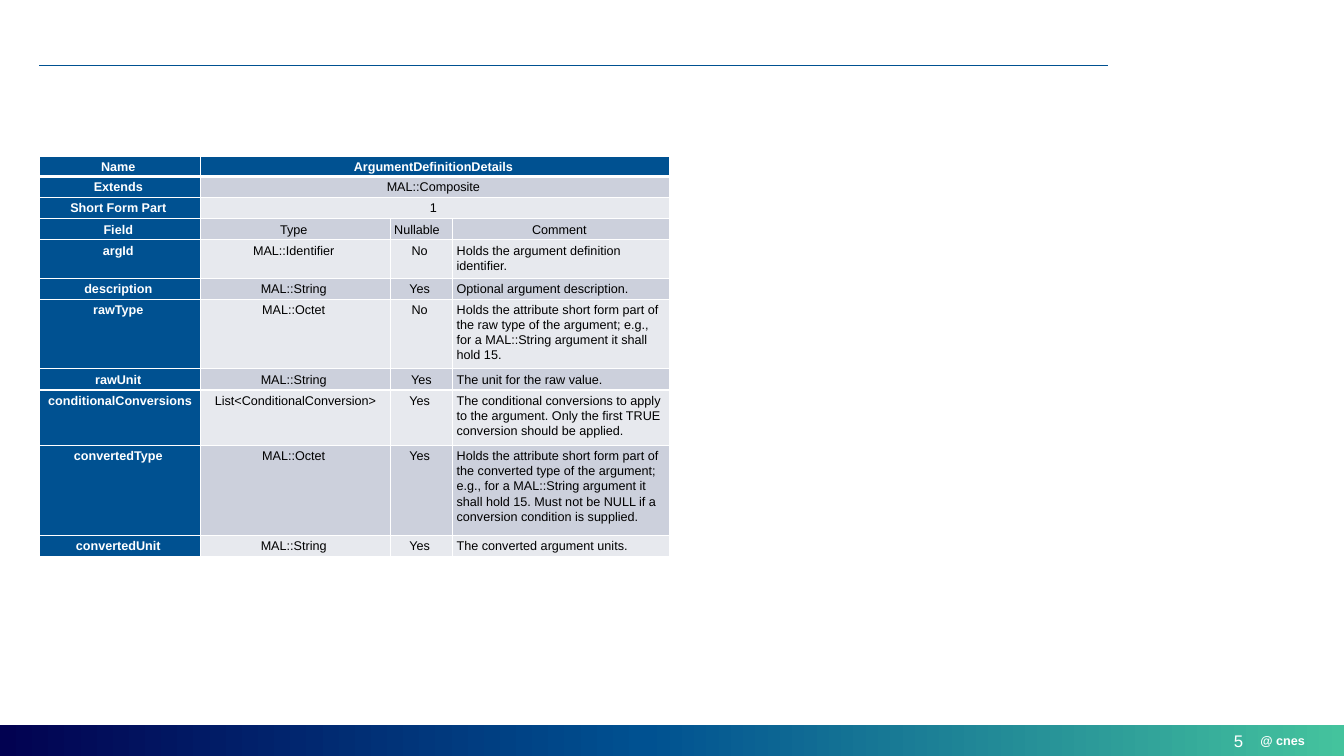
from copy import deepcopy

from lxml.etree import SubElement
from pptx import Presentation
from pptx.dml.color import RGBColor
from pptx.enum.shapes import MSO_CONNECTOR, MSO_SHAPE
from pptx.enum.text import MSO_ANCHOR, MSO_AUTO_SIZE, PP_ALIGN
from pptx.oxml.ns import qn
from pptx.util import Inches, Pt

NAVY = RGBColor(0x02, 0x02, 0x51)
BLUE = RGBColor(0x00, 0x51, 0x91)
GREEN = RGBColor(0x44, 0xC3, 0x9D)
WHITE = RGBColor(0xFF, 0xFF, 0xFF)
BLACK = RGBColor(0x00, 0x00, 0x00)
DARK_BAND = RGBColor(0xCC, 0xD0, 0xDC)
LIGHT_BAND = RGBColor(0xE7, 0xE9, 0xEE)

COLUMN_WIDTHS = [1.6, 1.88, 0.62, 2.15]
ROW_HEIGHTS = [0.2, 0.21, 0.21, 0.21, 0.38, 0.21, 0.69, 0.21, 0.55, 0.89, 0.21]
DEFINITION = [
    ("Name ", "ArgumentDefinitionDetails "),
    ("Extends ", "MAL::Composite "),
    ("Short Form Part ", "1 "),
    ("Field ", "Type ", "Nullable", "Comment "),
    ("argId ", "MAL::Identifier ", "No ",
     "Holds the argument definition identifier."),
    ("description ", "MAL::String ", "Yes ", "Optional argument description."),
    ("rawType ", "MAL::Octet ", "No ",
     "Holds the attribute short form part of the raw type of the argument; "
     "e.g., for a MAL::String argument it shall hold 15."),
    ("rawUnit ", "MAL::String ", "Yes", "The unit for the raw value."),
    ("conditionalConversions", "List<ConditionalConversion>", "Yes ",
     "The conditional conversions to apply to the argument. "
     "Only the first TRUE conversion should be applied."),
    ("convertedType ", "MAL::Octet ", "Yes ",
     "Holds the attribute short form part of the converted type of the argument; "
     "e.g., for a MAL::String argument it shall hold 15. "
     "Must not be NULL if a conversion condition is supplied."),
    ("convertedUnit ", "MAL::String ", "Yes ", "The converted argument units."),
]
FIELD_ROW = 3


def write(frame, text, size=9, color=WHITE, bold=False,
          align=PP_ALIGN.LEFT, spacing=None):
    paragraph = frame.paragraphs[0]
    paragraph.alignment = align
    paragraph.line_spacing = spacing
    run = paragraph.add_run()
    run.text = text
    run.font.name = "Arial"
    run.font.size = Pt(size)
    run.font.bold = bold
    run.font.color.rgb = color


def add_label(slide, text, left, top, width, height, **style):
    label = slide.shapes.add_textbox(
        Inches(left), Inches(top), Inches(width), Inches(height))
    frame = label.text_frame
    frame.margin_left = frame.margin_right = 0
    frame.margin_top = frame.margin_bottom = 0
    frame.vertical_anchor = MSO_ANCHOR.MIDDLE
    frame.word_wrap = False
    frame.auto_size = MSO_AUTO_SIZE.SHAPE_TO_FIT_TEXT
    write(frame, text, **style)


def add_footer_bar(slide):
    bar = slide.shapes.add_shape(
        MSO_SHAPE.RECTANGLE, 0, Inches(7.19), Inches(13.33), Inches(0.31))
    bar.shadow.inherit = False
    bar.line.fill.background()
    bar.fill.gradient()
    bar.fill.gradient_angle = 0
    stop_list = bar._element.spPr.find(qn("a:gradFill")).find(qn("a:gsLst"))
    stop_list.append(deepcopy(stop_list[0]))
    shades = [(0, NAVY), (0.48, BLUE), (1, GREEN)]
    for stop, (position, color) in zip(bar.fill.gradient_stops, shades):
        stop.position = position
        stop.color.rgb = color


def add_title_rule(slide):
    rule = slide.shapes.add_connector(
        MSO_CONNECTOR.STRAIGHT, Inches(0.39), Inches(0.65), Inches(10.99), Inches(0.65))
    rule.line.color.rgb = BLUE
    rule.line.width = Pt(1)
    SubElement(rule._element.spPr, qn("a:effectLst"))


def set_borders(cell, top, bottom):
    properties = cell._tc.get_or_add_tcPr()
    for side, points in (("L", 1), ("R", 1), ("T", top), ("B", bottom)):
        border = SubElement(properties, qn(f"a:ln{side}"), w=str(Pt(points)))
        fill = SubElement(border, qn("a:solidFill"))
        SubElement(fill, qn("a:srgbClr"), val=str(WHITE))


def style_cell(cell, row, column):
    set_borders(cell, top=3 if row == 1 else 1, bottom=3 if row == 0 else 1)
    cell.margin_left = cell.margin_right = Inches(0.04)
    cell.margin_top = Inches(0.03)
    cell.margin_bottom = 0
    band = DARK_BAND if row % 2 else LIGHT_BAND
    cell.fill.solid()
    cell.fill.fore_color.rgb = BLUE if row == 0 or column == 0 else band


def cell_alignment(row, column):
    is_comment = column == 3 and row > FIELD_ROW
    is_nullable_heading = column == 2 and row == FIELD_ROW
    return PP_ALIGN.LEFT if is_comment or is_nullable_heading else PP_ALIGN.CENTER


def add_definition_table(slide):
    table = slide.shapes.add_table(
        len(DEFINITION), len(COLUMN_WIDTHS), Inches(0.39), Inches(1.55),
        Inches(sum(COLUMN_WIDTHS)), Inches(sum(ROW_HEIGHTS))).table
    for column, width in zip(table.columns, COLUMN_WIDTHS):
        column.width = Inches(width)
    for table_row, height in zip(table.rows, ROW_HEIGHTS):
        table_row.height = Inches(height)
    for row, texts in enumerate(DEFINITION):
        for column in range(len(COLUMN_WIDTHS)):
            style_cell(table.cell(row, column), row, column)
        if len(texts) == 2:
            table.cell(row, 1).merge(table.cell(row, 3))
        for column, text in enumerate(texts):
            heading = row == 0 or column == 0
            write(table.cell(row, column).text_frame, text, bold=heading,
                  color=WHITE if heading else BLACK,
                  align=cell_alignment(row, column), spacing=1.07)


def main():
    presentation = Presentation()
    presentation.slide_width = Inches(13.33)
    presentation.slide_height = Inches(7.5)
    slide = presentation.slides.add_slide(presentation.slide_layouts[6])
    add_footer_bar(slide)
    add_title_rule(slide)
    add_label(slide, "@ cnes", 12.5, 7.27, 0.45, 0.15, bold=True)
    add_definition_table(slide)
    add_label(slide, "5", 12.07, 7.25, 0.26, 0.2, size=12, align=PP_ALIGN.RIGHT)
    presentation.save("out.pptx")


if __name__ == "__main__":
    main()
